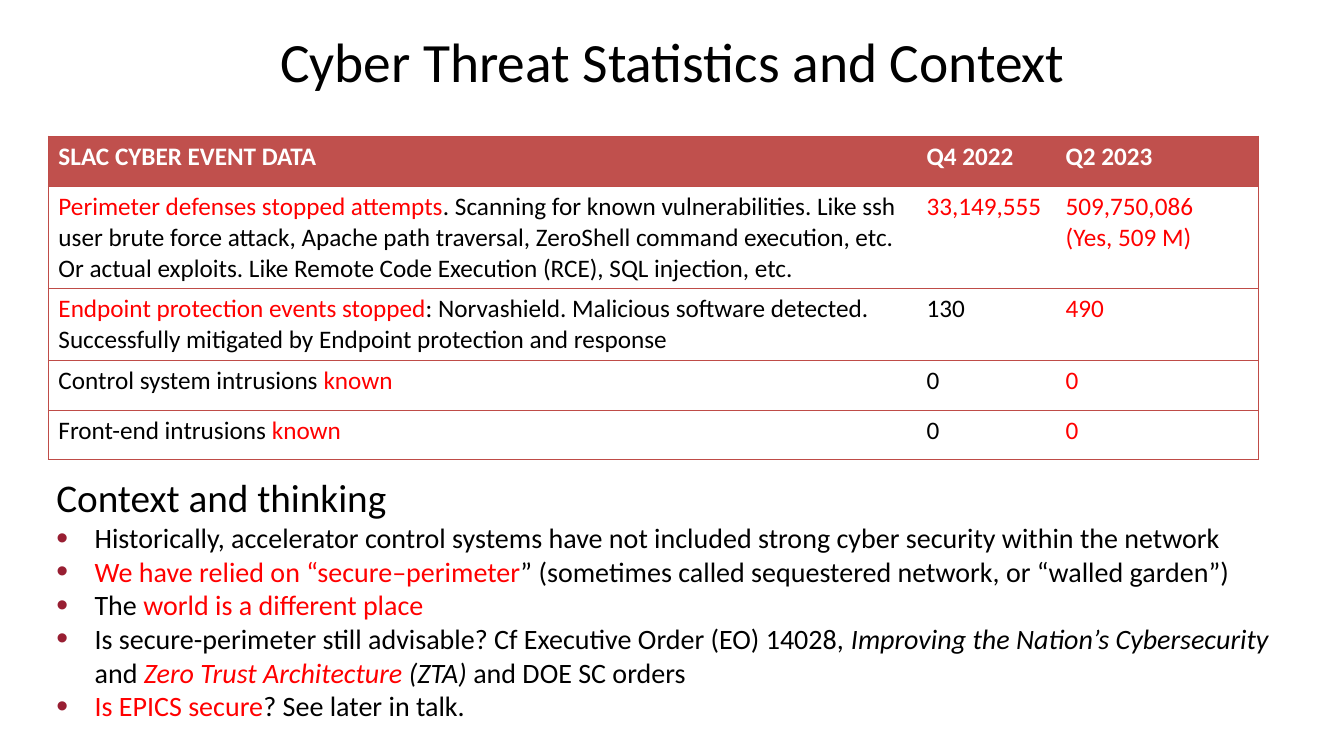
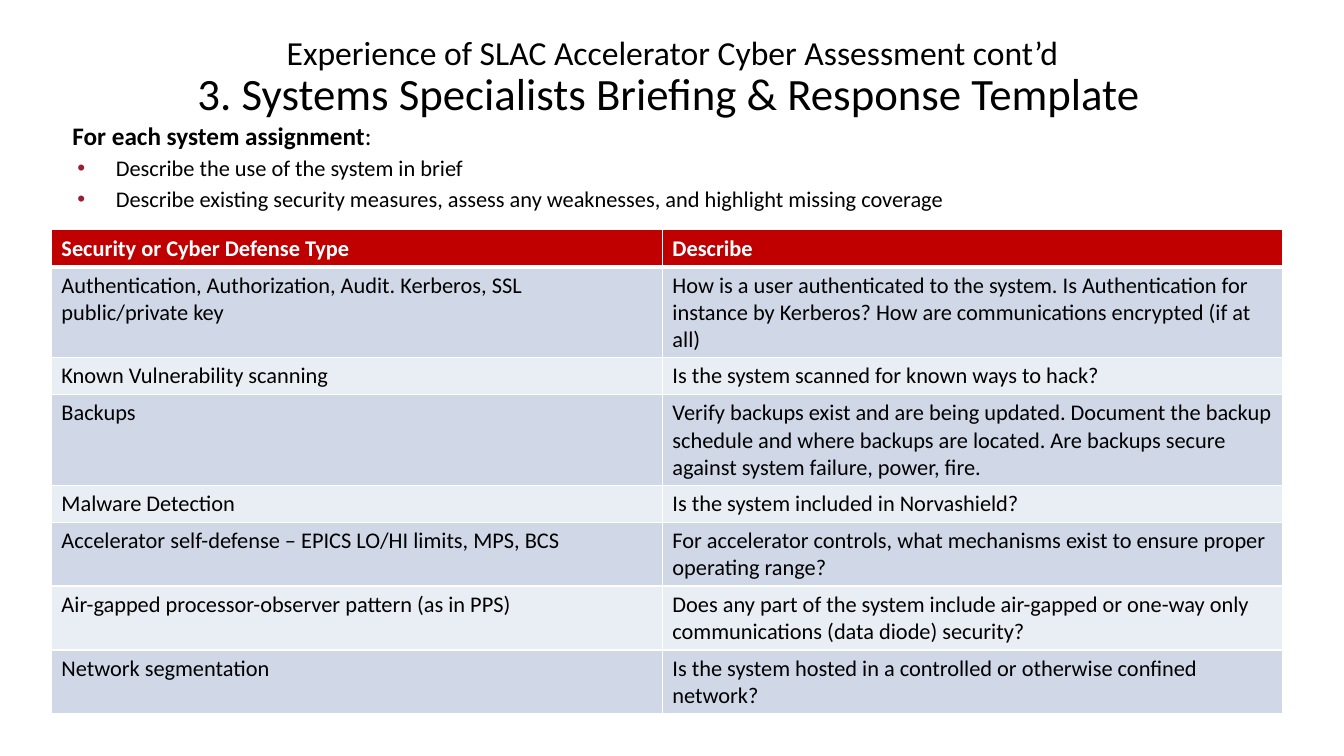
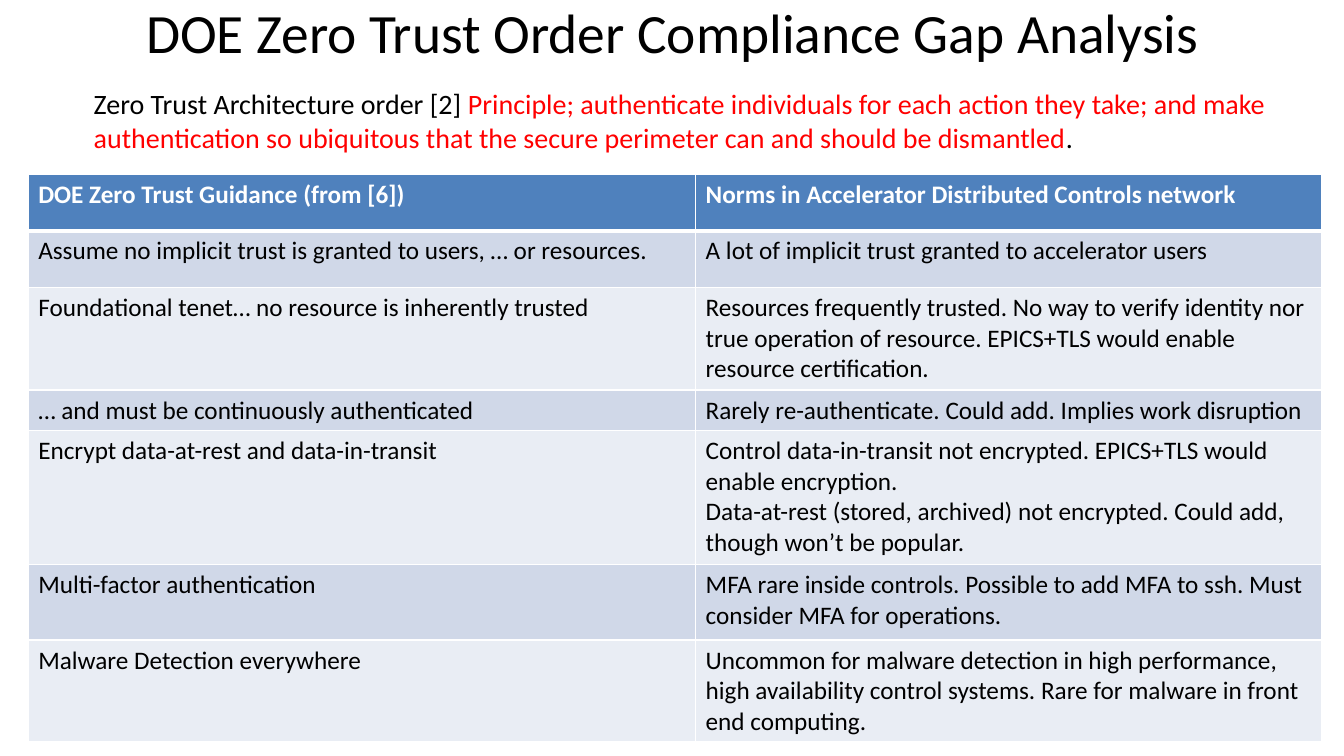
"""Build three slides on cyber threats, system briefings and zero trust gaps."""
from lxml.etree import SubElement
from pptx import Presentation
from pptx.dml.color import RGBColor
from pptx.enum.text import MSO_ANCHOR, MSO_AUTO_SIZE, PP_ALIGN
from pptx.oxml.ns import qn
from pptx.util import Inches, Pt

FONT = "Calibri"
PLAIN_TABLE_STYLE = "{2D5ABB26-0587-4C30-8999-92F81FD0307C}"
COLORS = {
    "black": "000000", "white": "FFFFFF", "red": "FF0000", "bullet": "981E32",
    "rule": "BF4C48", "brick": "C0504D", "crimson": "C00000", "blue": "4F81BD",
    "band dark": "D0D8E8", "band light": "E9EDF4",
}


def write(paragraph, content, size, color="black", bold=False):
    """Fill a paragraph from a string or from (text, style words) pairs."""
    font = paragraph.font
    font.name, font.size, font.bold = FONT, Pt(size), bold
    font.color.rgb = RGBColor.from_string(COLORS[color])
    for text, style in [(content, "")] if isinstance(content, str) else content:
        for number, line in enumerate(text.split("\n")):
            if number:
                paragraph.add_line_break()
            span = paragraph.add_run()
            span.text = line
            if "red" in style:
                span.font.color.rgb = RGBColor.from_string(COLORS["red"])
            if "italic" in style:
                span.font.italic = True
            if "bold" in style:
                span.font.bold = True


def add_grid(page, left, top, widths, heights, rows, size, header, bands, ruled):
    """Add a table; ruled ones have an outline and row lines, others white lines."""
    table = page.shapes.add_table(
        len(rows), len(widths), Inches(left), Inches(top),
        Inches(sum(widths)), Inches(sum(heights))).table
    table._tbl.tblPr.find(qn("a:tableStyleId")).text = PLAIN_TABLE_STYLE
    for column, width in zip(table.columns, widths):
        column.width = Inches(width)
    for row, height in zip(table.rows, heights):
        row.height = Inches(height)
    last = len(widths) - 1
    for row_index, row in enumerate(rows):
        for column_index, content in enumerate(row):
            cell = table.cell(row_index, column_index)
            inner = {"lnL": column_index > 0, "lnR": column_index < last,
                     "lnT": row_index > 0}
            heavy = {0: "lnB", 1: "lnT"}.get(row_index)
            for side in ("lnL", "lnR", "lnT", "lnB"):
                if ruled and inner.get(side):
                    continue
                points = 0.75 if ruled else 3 if side == heavy else 1
                line = SubElement(cell._tc.get_or_add_tcPr(), qn(f"a:{side}"),
                                  w=str(Pt(points)))
                fill = SubElement(line, qn("a:solidFill"))
                SubElement(fill, qn("a:srgbClr"),
                           val=COLORS["rule" if ruled else "white"])
            shade = bands[(row_index - 1) % len(bands)] if row_index else header
            cell.fill.solid()
            cell.fill.fore_color.rgb = RGBColor.from_string(COLORS[shade])
            write(cell.text_frame.paragraphs[0], content, size,
                  "black" if row_index else "white", row_index == 0)
    return table


deck = Presentation()
deck.slide_width, deck.slide_height = Inches(13.33), Inches(7.5)

pages = []
for heading, size, top in [
    ("Cyber Threat Statistics and Context", 39.6, 0.3),
    ("Experience of SLAC Accelerator Cyber Assessment cont’d", 24, 0.22),
    ("DOE Zero Trust Order Compliance Gap Analysis", 39.6, 0.02),
]:
    page = deck.slides.add_slide(deck.slide_layouts[5])
    title = page.shapes.title
    title.left, title.top = Inches(0.67), Inches(top)
    title.width, title.height = Inches(12), Inches(0.59)
    title.text_frame.auto_size = MSO_AUTO_SIZE.NONE
    title.text_frame.vertical_anchor = MSO_ANCHOR.MIDDLE
    title.text_frame.paragraphs[0].alignment = PP_ALIGN.CENTER
    write(title.text_frame.paragraphs[0], heading, size)
    pages.append(page)
statistics, briefing, compliance = pages

thinking = [
    "Historically, accelerator control systems have not included strong cyber "
    "security within the network",
    [("We have relied on “secure–perimeter", "red"),
     ("” (sometimes called sequestered network, or “walled garden”)", "")],
    [("The ", ""), ("world is a different place", "red")],
    [("Is secure-perimeter still advisable? Cf Executive Order (EO) 14028, ", ""),
     ("Improving the Nation’s Cybersecurity ", "italic"), ("and ", ""),
     ("Zero Trust Architecture ", "red italic"), ("(ZTA) ", "italic"),
     ("and DOE SC orders", "")],
    [("Is EPICS secure", "red"), ("? See later in talk.", "")],
]
assignments = [
    "Describe the use of the system in brief",
    "Describe existing security measures, assess any weaknesses, and highlight "
    "missing coverage",
]
principle = [
    ("Zero Trust Architecture order [2] ", ""),
    ("Principle; authenticate individuals for each action they take; and make "
     "authentication so ubiquitous that the secure perimeter can and should be "
     "dismantled", "red"),
    (".", ""),
]

text_blocks = [
    (statistics, (0.34, 4.65, 12.66, 2.57), 0, None,
     [("Context and thinking", 28, 0.12, 0)]
     + [(item, 20, 0.5, 120) for item in thinking]),
    (briefing, (1.86, 0.6, 9.69, 0.64), 0, None,
     [("3. Systems Specialists Briefing & Response Template", 32, 0, 0)]),
    (briefing, (0.67, 1.48, 11.82, 0.91), 3.2, None,
     [(item, 16, 0.38, 100) for item in assignments]),
    (briefing, (0.62, 1.14, 3.19, 0.4), 0, None,
     [([("For each system assignment", "bold"), (":", "")], 18, 0, 0)]),
    (compliance, (0.21, 0.81, 12.91, 0.84), 0, "white",
     [(principle, 20, 0.62, 0)]),
]
for page, place, gap, background, items in text_blocks:
    box = page.shapes.add_textbox(*[Inches(length) for length in place])
    if background:
        box.fill.solid()
        box.fill.fore_color.rgb = RGBColor.from_string(COLORS[background])
    frame = box.text_frame
    frame.word_wrap = True
    for number, (content, size, indent, bullet_percent) in enumerate(items):
        paragraph = frame.add_paragraph() if number else frame.paragraphs[0]
        properties = paragraph._p.get_or_add_pPr()
        properties.set("marL", str(Inches(indent)))
        if bullet_percent:
            properties.set("indent", str(Inches(-0.38)))
            bullet_color = SubElement(properties, qn("a:buClr"))
            SubElement(bullet_color, qn("a:srgbClr"), val=COLORS["bullet"])
            SubElement(properties, qn("a:buSzPct"), val=str(bullet_percent * 1000))
            SubElement(properties, qn("a:buFont"), typeface="Arial")
            SubElement(properties, qn("a:buChar"), char="•")
        if number and gap:
            paragraph.space_before = Pt(gap)
        write(paragraph, content, size)

events = [
    ("SLAC CYBER EVENT DATA", "Q4 2022", "Q2 2023"),
    ([("Perimeter defenses stopped attempts", "red"),
      (". Scanning for known vulnerabilities. Like ssh user brute force attack, "
       "Apache path traversal, ZeroShell command execution, etc. Or actual "
       "exploits. Like Remote Code Execution (RCE), SQL injection, etc.", "")],
     [("33,149,555", "red")], [("509,750,086\n(Yes, 509 M)", "red")]),
    ([("Endpoint protection events stopped", "red"),
      (": Norvashield. Malicious software detected. Successfully mitigated by "
       "Endpoint protection and response", "")],
     "130", [("490", "red")]),
    ([("Control system intrusions ", ""), ("known", "red")], "0", [("0", "red")]),
    ([("Front-end intrusions ", ""), ("known", "red")], "0", [("0", "red")]),
]
event_table = add_grid(
    statistics, 0.48, 1.35, [8.61, 1.38, 2.01], [0.5, 1.01, 0.72, 0.49, 0.49],
    events, 18, "brick", ["white"], True)
event_table.cell(1, 0).margin_right = 0

defenses = [
    ("Security or Cyber Defense Type", "Describe"),
    ("Authentication, Authorization, Audit. Kerberos, SSL public/private key",
     "How is a user authenticated to the system. Is Authentication for instance by "
     "Kerberos? How are communications encrypted (if at all)"),
    ("Known Vulnerability scanning", "Is the system scanned for known ways to hack?"),
    ("Backups",
     "Verify backups exist and are being updated. Document the backup schedule and "
     "where backups are located. Are backups secure against system failure, power, "
     "fire."),
    ("Malware Detection", "Is the system included in Norvashield?"),
    ("Accelerator self-defense – EPICS LO/HI limits, MPS, BCS",
     "For accelerator controls, what mechanisms exist to ensure proper operating "
     "range?"),
    ("Air-gapped processor-observer pattern (as in PPS)",
     "Does any part of the system include air-gapped or one-way only communications "
     "(data diode) security?"),
    ("Network segmentation",
     "Is the system hosted in a controlled or otherwise confined network?"),
]
add_grid(briefing, 0.51, 2.28, [6.06, 6.15],
         [0.35, 0.9, 0.36, 0.9, 0.36, 0.63, 0.63, 0.62],
         defenses, 16, "crimson", ["band dark", "band light"], False)

guidance = [
    ("DOE Zero Trust Guidance (from [6])",
     "Norms in Accelerator Distributed Controls network"),
    ("Assume no implicit trust is granted to users, … or resources.",
     "A lot of implicit trust granted to accelerator users"),
    ("Foundational tenet… no resource is inherently trusted",
     "Resources frequently trusted. No way to verify identity nor true operation of "
     "resource. EPICS+TLS would enable resource certification."),
    ("… and must be continuously authenticated",
     "Rarely re-authenticate. Could add. Implies work disruption"),
    ("Encrypt data-at-rest and data-in-transit",
     "Control data-in-transit not encrypted. EPICS+TLS would enable encryption.\n"
     "Data-at-rest (stored, archived) not encrypted. Could add, though won’t be "
     "popular."),
    ("Multi-factor authentication",
     "MFA rare inside controls. Possible to add MFA to ssh. Must consider MFA for "
     "operations."),
    ("Malware Detection everywhere",
     "Uncommon for malware detection in high performance, high availability control "
     "systems. Rare for malware in front end computing."),
]
add_grid(compliance, 0.28, 1.73, [6.62, 6.21],
         [0.56, 0.56, 1.02, 0.4, 1.33, 0.75, 1.01],
         guidance, 18, "blue", ["band dark", "band light"], False)

deck.save("out.pptx")
